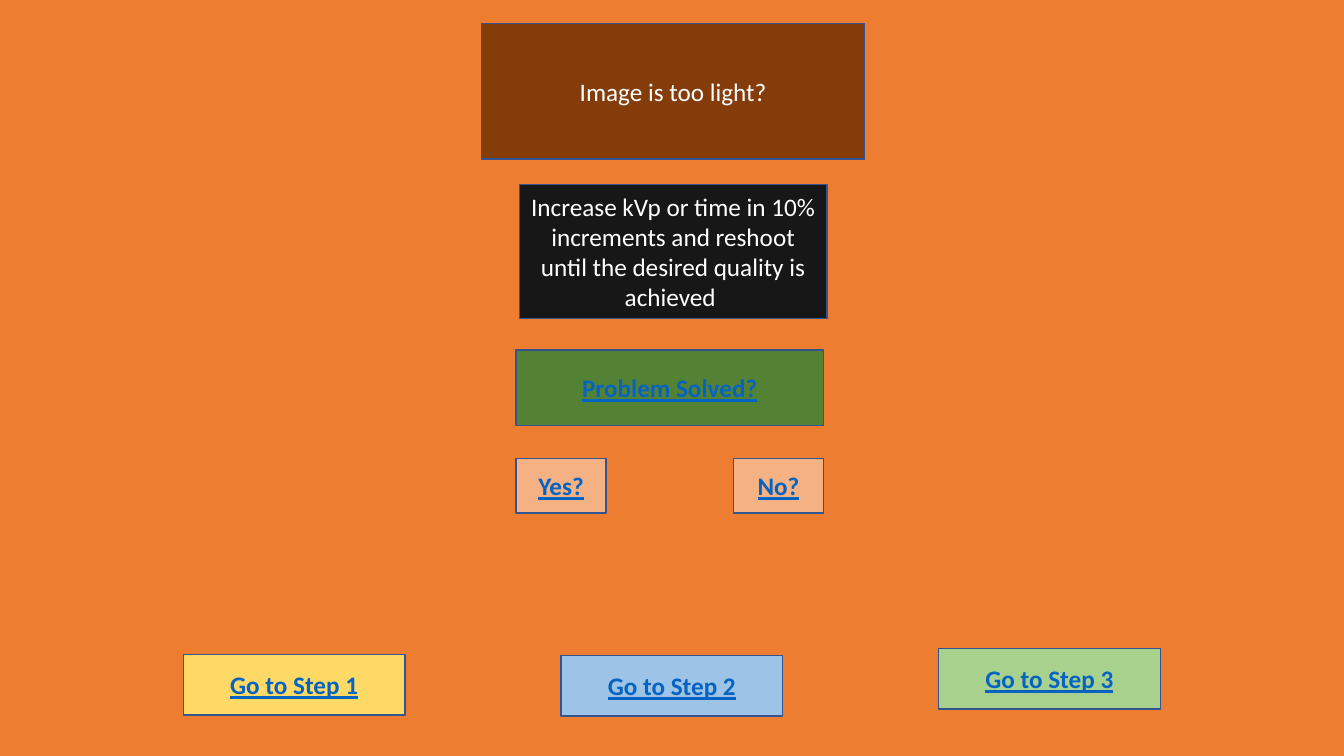
from pptx import Presentation
from pptx import util as u
from pptx.dml import color
from pptx.enum import shapes, text

LINK = "0563C1"


def paint(target, hex_code):
    """Give a fill or line format one solid colour."""
    target.solid()
    target.fore_color.rgb = color.RGBColor.from_string(hex_code)


def write(box, wording, size=18, ink="FFFFFF", link=False):
    """Write centred text in a box, bold and underlined for a link."""
    frame = box.text_frame
    frame.word_wrap = True
    frame.auto_size = text.MSO_AUTO_SIZE.NONE
    frame.vertical_anchor = text.MSO_ANCHOR.MIDDLE
    frame.margin_left = frame.margin_right = u.Pt(7.2)
    frame.margin_top = frame.margin_bottom = u.Pt(3.6)
    paragraph = frame.paragraphs[0]
    paragraph.alignment = text.PP_ALIGN.CENTER
    paragraph.line_spacing = 1.0
    paragraph.space_before = u.Pt(0)
    run = paragraph.add_run()
    run.text = wording
    run.font.name = "Calibri"
    run.font.size = u.Pt(size)
    run.font.bold = run.font.underline = link
    run.font.color.rgb = color.RGBColor.from_string(LINK if link else ink)


def style(box, fill):
    """Give a box its fill and the common blue outline."""
    paint(box.fill, fill)
    paint(box.line.fill, "325491")
    box.line.width = u.Pt(1)


def add_box(slide, wording, area, fill, kind=shapes.MSO_SHAPE.FLOWCHART_PROCESS, **fmt):
    """Add a filled box with its text in the given area."""
    box = slide.shapes.add_shape(kind, *map(u.Pt, area))
    box.shadow.inherit = False
    style(box, fill)
    write(box, wording, **fmt)


def add_problem(slide, left, top, width, height):
    """Place the problem as the slide title."""
    problem = slide.shapes.title
    problem.left, problem.top = u.Pt(left), u.Pt(top)
    problem.width, problem.height = u.Pt(width), u.Pt(height)
    style(problem, "843C0B")
    write(problem, "Image is too light?")


def add_check(slide, left, top, width, height):
    """Place the question across the top and its answers at both lower corners."""
    add_box(slide, "Problem Solved?", (left, top, width, 54), "548235", link=True)
    answer_width, answer_height = 64.2, 38.8
    answer_top = top + height - answer_height
    for answer, x in (("Yes?", left), ("No?", left + width - answer_width)):
        add_box(slide, answer, (x, answer_top, answer_width, answer_height),
                "F4B183", link=True)


def add_steps(slide, left, top, width, height):
    """Spread the step buttons evenly over the width, each with its own drop."""
    button_width, button_height = 158.4, 43.4
    pitch = (width - button_width) / 2
    buttons = (("FFD966", 4.3), ("9DC3E6", height - button_height), ("A9D18E", 0))
    for index, (fill, drop) in enumerate(buttons):
        area = (left + index * pitch, top + drop, button_width, button_height)
        add_box(slide, f"Go to Step {index + 1}", area, fill,
                kind=shapes.MSO_SHAPE.RECTANGLE, link=True)


def main():
    """Build the troubleshooting slide."""
    deck = Presentation()
    deck.slide_width, deck.slide_height = u.Pt(960), u.Pt(540)
    slide = deck.slides.add_slide(deck.slide_layouts[5])
    paint(slide.background.fill, "ED7D31")
    add_problem(slide, 344, 16.6, 273.6, 97)
    add_box(slide, "Increase kVp or time in 10% increments and reshoot "
            "until the desired quality is achieved ", (371, 131.6, 219.6, 95.8), "181717")
    add_check(slide, 368.7, 250, 219.4, 116.4)
    add_steps(slide, 131, 463, 697.8, 48.4)
    deck.save("out.pptx")


if __name__ == "__main__":
    main()
